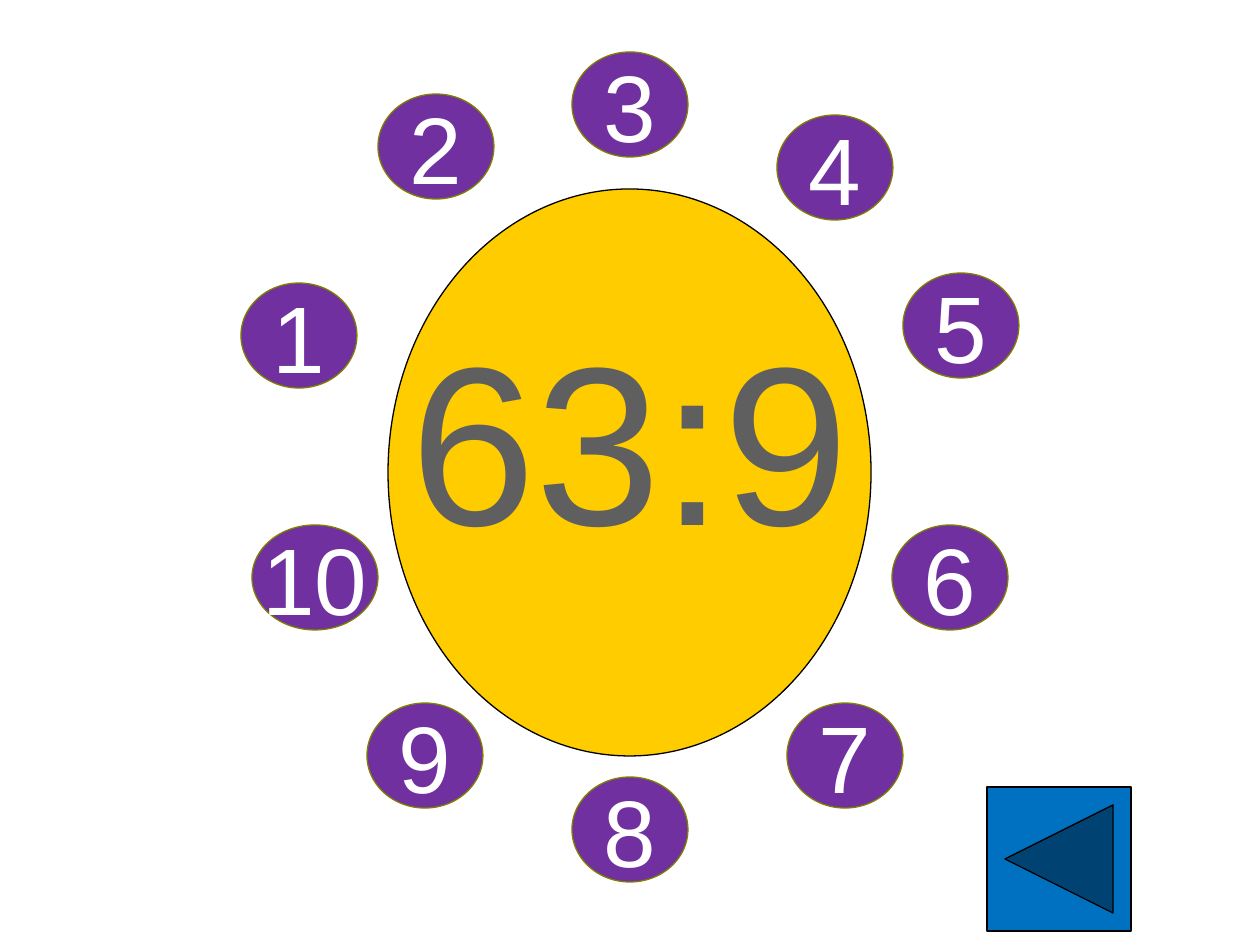
from pptx import Presentation
from pptx.dml.color import RGBColor
from pptx.enum.shapes import MSO_SHAPE
from pptx.enum.text import MSO_ANCHOR, MSO_AUTO_SIZE, PP_ALIGN
from pptx.util import Emu, Pt

OVAL = MSO_SHAPE.OVAL
CONNECTOR = MSO_SHAPE.FLOWCHART_CONNECTOR
BACK_BUTTON = MSO_SHAPE.ACTION_BUTTON_BACK_OR_PREVIOUS
MIDDLE = MSO_ANCHOR.MIDDLE
NO_AUTOSIZE = MSO_AUTO_SIZE.NONE
CENTER = PP_ALIGN.CENTER

PX = 914400 / 126
SLIDE_SIZE = (1260, 945)

QUESTION = "63:9"
QUESTION_BOX = (315, 199, 630, 472)
DISC_BOX = (388, 189, 483, 567)
BACK_BOX = (987, 787, 144, 144)

ANSWER_WIDTH, WIDE_ANSWER_WIDTH, ANSWER_HEIGHT = 116, 126, 105
# Left and top of each answer, clockwise from 1 to 10
ANSWER_CORNERS = [
    (241, 283), (378, 94), (572, 52), (777, 115), (903, 273),
    (892, 525), (787, 703), (572, 777), (367, 703), (252, 525),
]


def emu(*lengths):
    return [Emu(round(length * PX)) for length in lengths]


def color(hex_code):
    return RGBColor.from_string(hex_code)


def add_filled(slide, kind, box, fill, line):
    shape = slide.shapes.add_shape(kind, *emu(*box))
    shape.shadow.inherit = False
    shape.fill.solid()
    shape.fill.fore_color.rgb = color(fill)
    shape.line.color.rgb = color(line)
    shape.line.width = Pt(0.75)
    return shape


def write(shape, text, size, text_color):
    """Put one centred, unwrapped line in the middle of the shape."""
    frame = shape.text_frame
    frame.text = text
    frame.word_wrap = False
    frame.auto_size = NO_AUTOSIZE
    frame.vertical_anchor = MIDDLE
    paragraph = frame.paragraphs[0]
    paragraph.alignment = CENTER
    paragraph.font.name = "Arial"
    paragraph.font.size = Pt(size)
    paragraph.font.color.rgb = color(text_color)


def main():
    prs = Presentation()
    prs.slide_width, prs.slide_height = emu(*SLIDE_SIZE)
    slide = prs.slides.add_slide(prs.slide_layouts[5])

    question = slide.shapes.title
    question.left, question.top, question.width, question.height = emu(*QUESTION_BOX)
    write(question, QUESTION, 129, "5F5F5F")

    disc = add_filled(slide, OVAL, DISC_BOX, "FFCC00", "000000")
    question._element.addprevious(disc._element)  # disc lies behind the question

    for number, corner in enumerate(ANSWER_CORNERS, start=1):
        width = WIDE_ANSWER_WIDTH if number >= 10 else ANSWER_WIDTH
        box = (*corner, width, ANSWER_HEIGHT)
        answer = add_filled(slide, CONNECTOR, box, "7030A0", "808000")
        write(answer, str(number), 54, "FFFFFF")

    add_filled(slide, BACK_BUTTON, BACK_BOX, "0070C0", "000000")
    prs.save("out.pptx")


if __name__ == "__main__":
    main()
